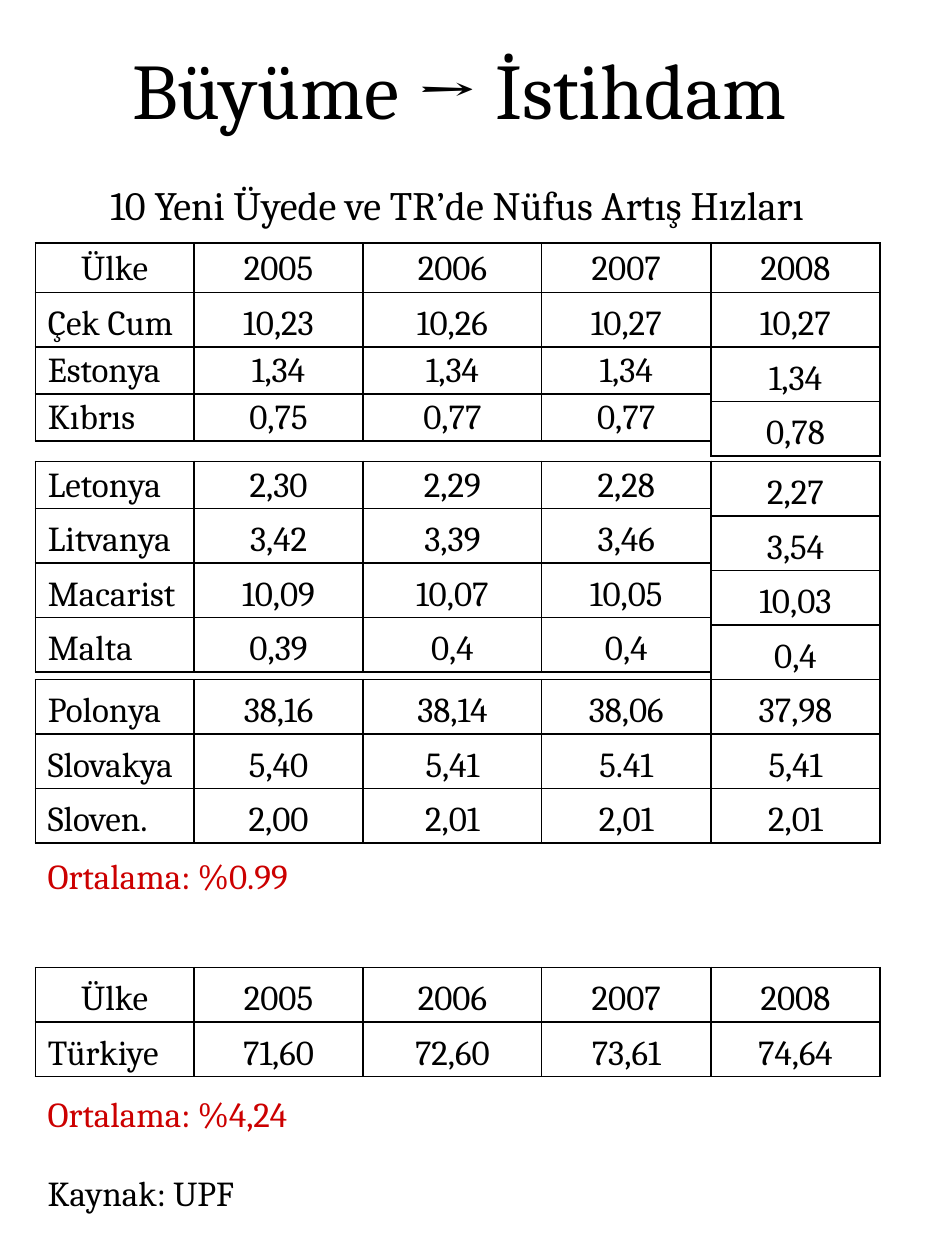
from dataclasses import dataclass

from lxml.etree import SubElement
from pptx import Presentation
from pptx.dml.color import RGBColor
from pptx.enum.text import MSO_ANCHOR, MSO_AUTO_SIZE, PP_ALIGN
from pptx.oxml.ns import qn
from pptx.util import Inches, Pt


@dataclass(frozen=True)
class Theme:
    font: str = "Cambria"
    ink: str = "000000"
    accent: str = "CC0000"
    title: int = 45
    subtitle: int = 23
    body: int = 20
    border: int = 1


@dataclass(frozen=True)
class Box:
    """Left, top, width and height in percent of the slide."""
    left: float
    top: float
    width: float
    height: float


THEME = Theme()
SLIDE_WIDTH, SLIDE_HEIGHT = 7.5, 10
MARGIN = 3.73
COLUMNS = [16.8, 17.9, 18.9, 17.9, 17.9]
LINE, ROW = 3.9, 4.33
HEADER = ["Ülke", "2005", "2006", "2007", "2008"]
MEMBERS = [
    HEADER,
    ["Çek Cum", "10,23", "10,26", "10,27", "10,27"],
    ["Estonya", "1,34", "1,34", "1,34", "1,34"],
    ["Kıbrıs", "0,75", "0,77", "0,77", "0,78"],
    ["Letonya", "2,30", "2,29", "2,28", "2,27"],
    ["Litvanya", "3,42", "3,39", "3,46", "3,54"],
    ["Macarist", "10,09", "10,07", "10,05", "10,03"],
    ["Malta", "0,39", "0,4", "0,4", "0,4"],
    ["Polonya", "38,16", "38,14", "38,06", "37,98"],
    ["Slovakya", "5,40", "5,41", "5.41", "5,41"],
    ["Sloven.", "2,00", "2,01", "2,01", "2,01"],
]
TURKEY = [HEADER, ["Türkiye", "71,60", "72,60", "73,61", "74,64"]]


def across(percent):
    return Inches(SLIDE_WIDTH * percent / 100)


def down(percent):
    return Inches(SLIDE_HEIGHT * percent / 100)


def frame(box):
    return across(box.left), down(box.top), across(box.width), down(box.height)


def write(text_frame, text, size=THEME.body, color=THEME.ink, align=PP_ALIGN.LEFT):
    paragraph = text_frame.paragraphs[0]
    paragraph.alignment = align
    run = paragraph.add_run()
    run.text = text
    run.font.name = THEME.font
    run.font.size = Pt(size)
    run.font.color.rgb = RGBColor.from_string(color)


def add_title(slide, box, text):
    title = slide.shapes.title
    title.left, title.top, title.width, title.height = frame(box)
    title.text_frame.auto_size = MSO_AUTO_SIZE.NONE
    title.text_frame.vertical_anchor = MSO_ANCHOR.TOP
    write(title.text_frame, text, size=THEME.title, align=PP_ALIGN.CENTER)


def add_line(slide, box, text, **style):
    line = slide.shapes.add_textbox(*frame(box)).text_frame
    line.word_wrap = True
    write(line, text, **style)


def outline(cell):
    properties = cell._tc.get_or_add_tcPr()
    for side in ("a:lnL", "a:lnR", "a:lnT", "a:lnB"):
        edge = SubElement(properties, qn(side), w=str(Pt(THEME.border)))
        fill = SubElement(edge, qn("a:solidFill"))
        SubElement(fill, qn("a:srgbClr"), val=THEME.ink)


def add_grid(slide, box, rows, widths, heights):
    grid = slide.shapes.add_table(len(rows), len(widths), *frame(box)).table
    grid.first_row = grid.horz_banding = False
    for column, width in zip(grid.columns, widths):
        column.width = across(width)
    for row, height, values in zip(grid.rows, heights, rows):
        row.height = down(height)
        for cell, value in zip(row.cells, values):
            is_country = value[0].isalpha() and value != HEADER[0]
            cell.margin_top = cell.margin_bottom = Inches(0.02)
            cell.vertical_anchor = MSO_ANCHOR.BOTTOM
            outline(cell)
            cell.fill.background()
            write(cell.text_frame, value,
                  align=PP_ALIGN.LEFT if is_country else PP_ALIGN.CENTER)


def add_band(slide, box, rows, main_heights, last_heights):
    """Set the first four columns and the last year as two adjoining tables."""
    main_width = sum(COLUMNS[:-1])
    add_grid(slide, Box(box.left, box.top, main_width, box.height),
             [row[:-1] for row in rows], COLUMNS[:-1], main_heights)
    add_grid(slide, Box(box.left + main_width, box.top, COLUMNS[-1], box.height),
             [row[-1:] for row in rows], COLUMNS[-1:], last_heights)


def add_members(slide, box):
    bands = [
        (0, 4, [LINE, ROW, 3.7, 3.7], [LINE] + [ROW] * 3),
        (4, 8, [3.2] + [ROW] * 3, [ROW] * 4),
        (8, 11, [ROW] * 3, [ROW] * 3),
    ]
    for first, end, main_heights, last_heights in bands:
        band = Box(box.left, box.top + first * ROW, box.width, (end - first) * ROW)
        add_band(slide, band, MEMBERS[first:end], main_heights, last_heights)


def build_slide(presentation):
    slide = presentation.slides.add_slide(presentation.slide_layouts[5])
    width = sum(COLUMNS)
    add_title(slide, Box(0, 2.7, 97.2, 26), "Büyüme → İstihdam")
    add_line(slide, Box(MARGIN, 13.8, width, LINE),
             "10 Yeni Üyede ve TR’de Nüfus Artış Hızları",
             size=THEME.subtitle, align=PP_ALIGN.CENTER)
    add_members(slide, Box(MARGIN, 19.3, width, len(MEMBERS) * ROW))
    add_band(slide, Box(MARGIN, 76.8, width, 2 * ROW), TURKEY, [ROW] * 2, [ROW] * 2)
    for top, text, color in [
        (67.3, "Ortalama: %0.99", THEME.accent),
        (86.2, "Ortalama: %4,24", THEME.accent),
        (92.5, "Kaynak: UPF", THEME.ink),
    ]:
        add_line(slide, Box(MARGIN, top, 69.33, LINE), text, color=color)


def main():
    presentation = Presentation()
    presentation.slide_width = Inches(SLIDE_WIDTH)
    presentation.slide_height = Inches(SLIDE_HEIGHT)
    build_slide(presentation)
    presentation.save("out.pptx")


if __name__ == "__main__":
    main()
